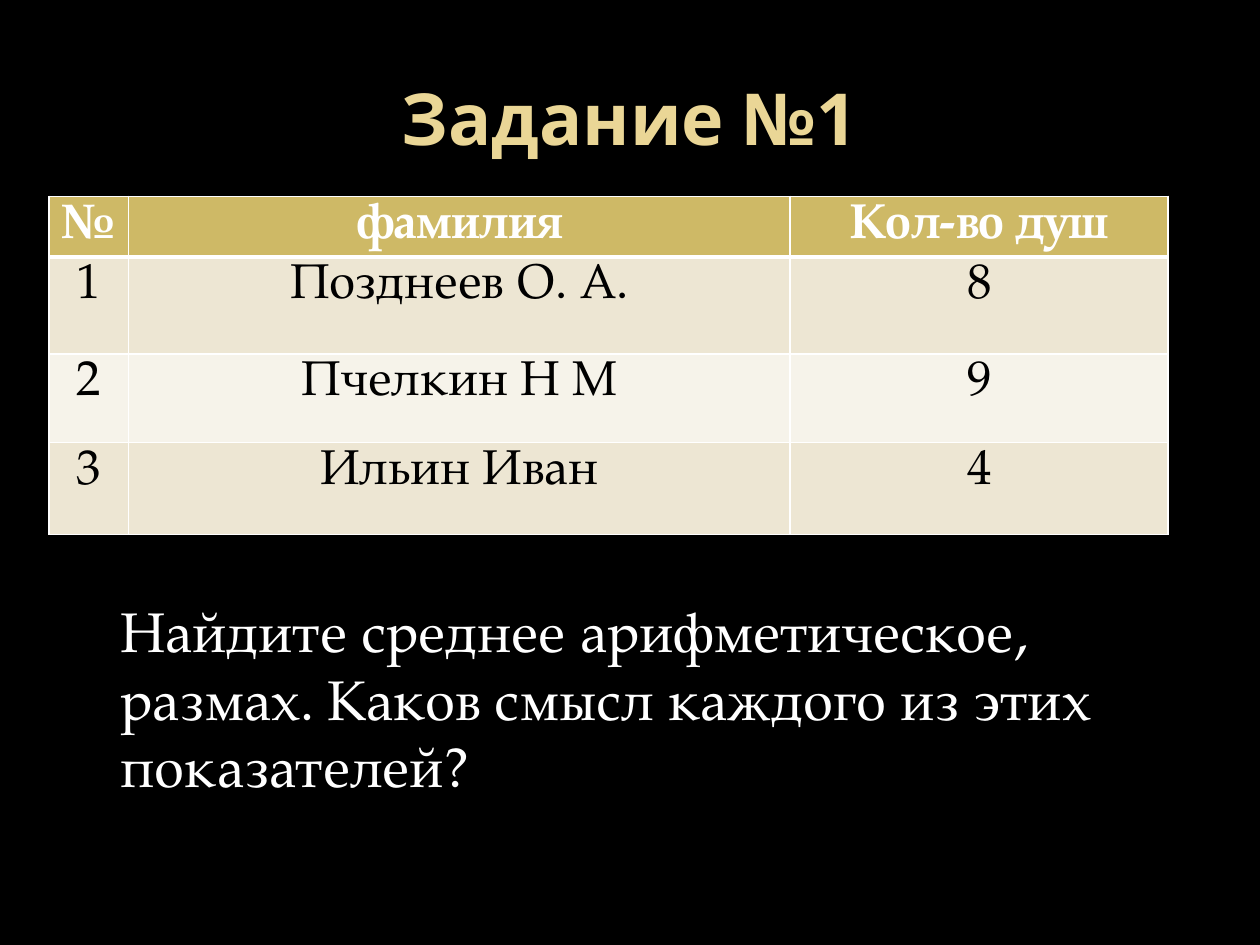
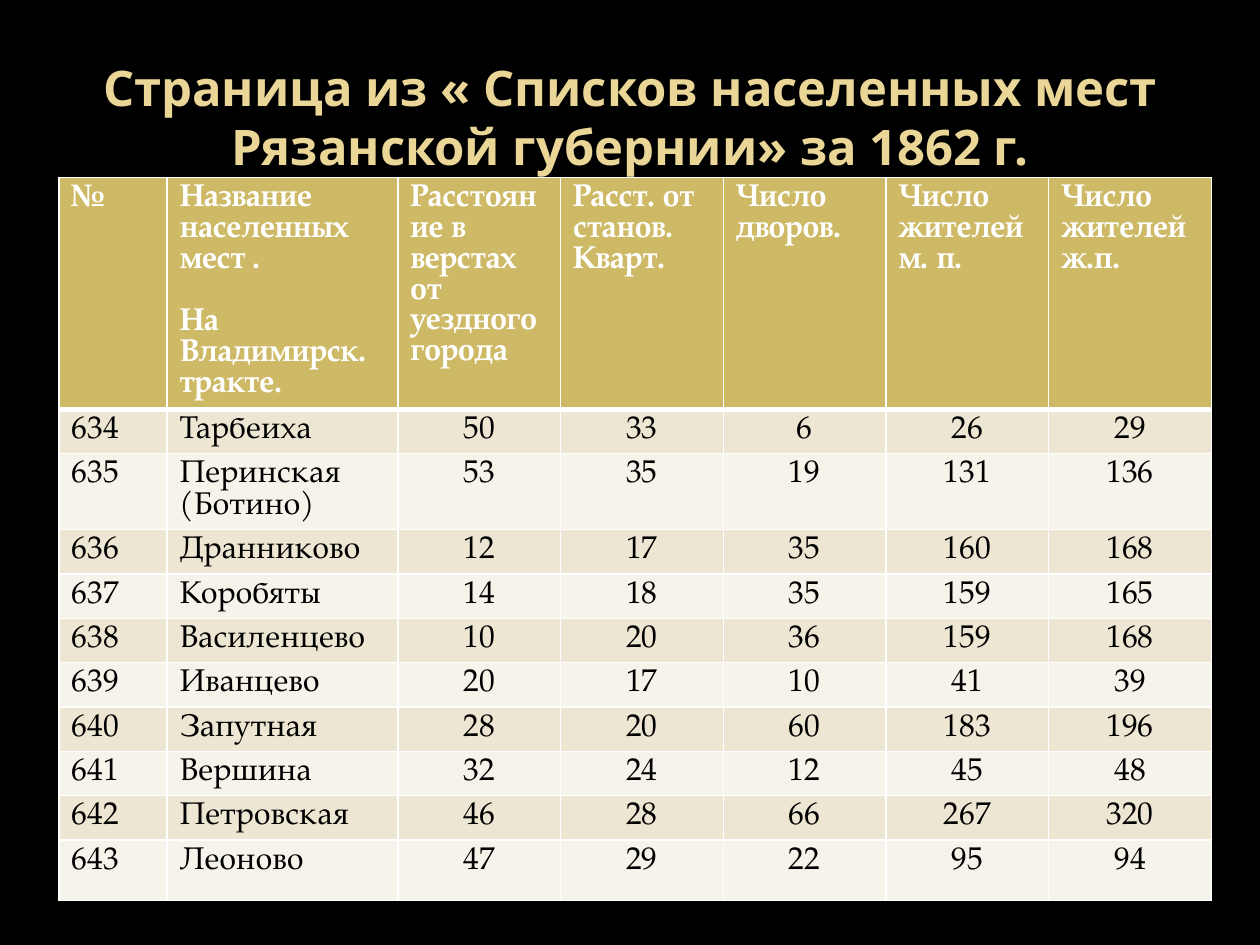
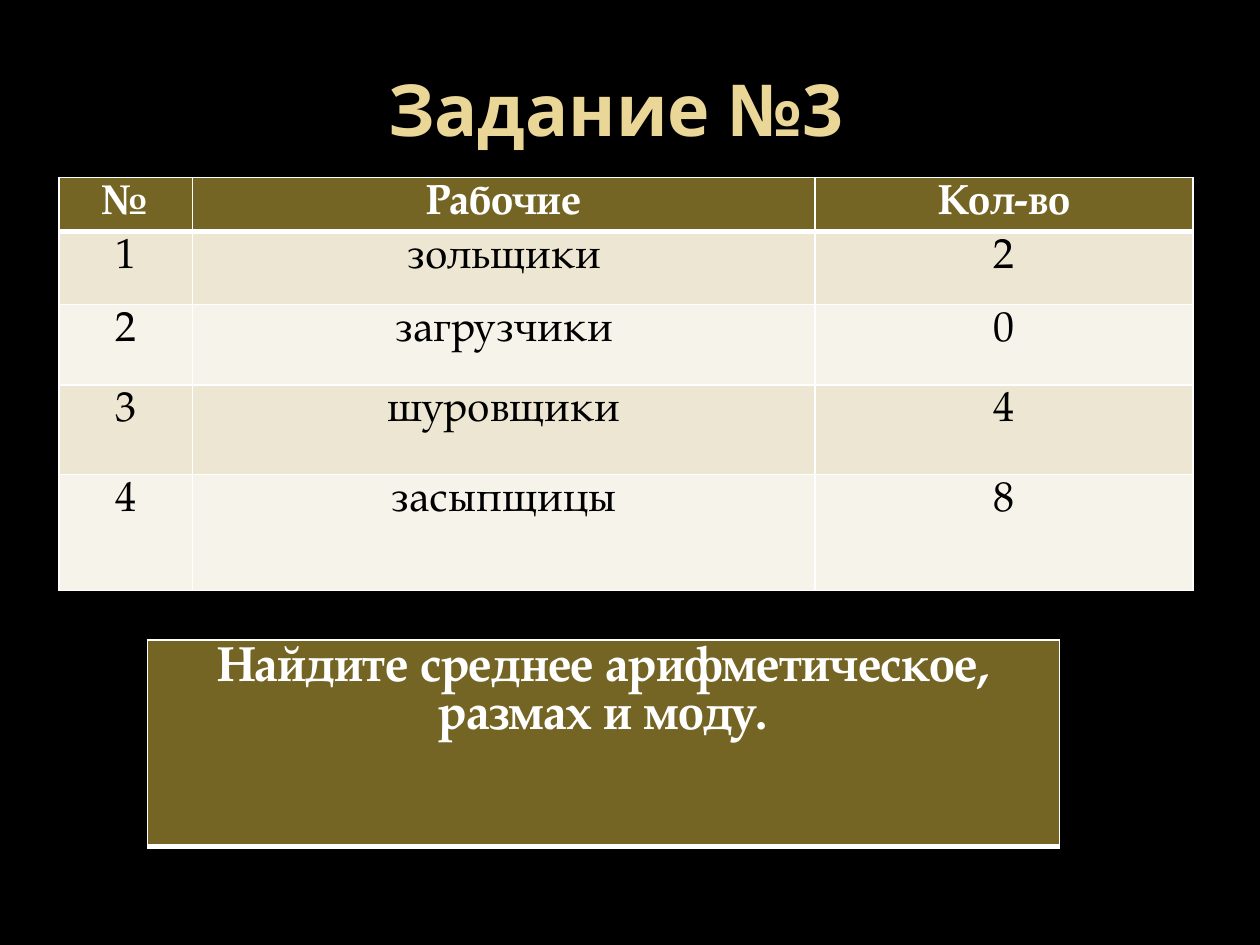
from pptx import Presentation
from pptx.dml.color import RGBColor as Rgb
from pptx.enum.text import MSO_ANCHOR as Anchor, PP_ALIGN as Align
from pptx.oxml import parse_xml
from pptx.oxml.ns import nsdecls
from pptx.util import Cm, Pt

HUES = {
    "back": "000000", "title": "EAD696", "white": "FFFFFF", "ink": "000000",
    "gold": "CEB966", "olive": "756525", "dark": "EDE6D3", "light": "F6F3EA",
}
HEAD = "Open Sans"
BODY = "TeX Gyre Pagella"


def style(para, face, size, hue, bold, align):
    para.alignment = align
    font = para.font
    font.name, font.size, font.bold = face, Pt(size), bold
    font.color.rgb = Rgb.from_string(HUES[hue])


def draw_table(slide, rows, left, top, widths, heights, size, band, aligns):
    frame = slide.shapes.add_table(
        len(rows), len(widths), Cm(left), Cm(top), Cm(sum(widths)), Cm(sum(heights)))
    table = frame.table
    for col, width in zip(table.columns, widths):
        col.width = Cm(width)
    for r, (row, height) in enumerate(zip(rows, heights)):
        table.rows[r].height = Cm(height)
        first = r == 0
        fill = band if first else ("dark" if r % 2 else "light")
        for c, text in enumerate(row):
            cell = table.cell(r, c)
            cell.text = text
            align = aligns[0] if first else aligns[1 + (c > 1)]
            for para in cell.text_frame.paragraphs:
                style(para, BODY, size, "white" if first else "ink", first, align)
            props = cell._tc.get_or_add_tcPr()
            for side in "LRTB":
                thick = (first and side == "B") or (r == 1 and side == "T")
                props.append(parse_xml(
                    f'<a:ln{side} {nsdecls("a")} w="{Pt(3 if thick else 1)}"><a:solidFill>'
                    f'<a:srgbClr val="{HUES["white"]}"/></a:solidFill></a:ln{side}>'))
            cell.fill.solid()
            cell.fill.fore_color.rgb = Rgb.from_string(HUES[fill])
    return table


prs = Presentation()
prs.slide_width, prs.slide_height = Cm(25.4), Cm(19.05)
back = prs.slide_master.background.fill
back.solid()
back.fore_color.rgb = Rgb.from_string(HUES["back"])

TITLES = [
    ("Задание №1", 41, 1.27, 0.76),
    ("Страница из « Списков населенных мест Рязанской губернии» за 1862 г.", 28, 1.27, 0.76),
    ("Задание №3", 41, 0.99, 0.58),
]
slides = []
for text, size, left, top in TITLES:
    slide = prs.slides.add_slide(prs.slide_layouts[5])
    title = slide.shapes.title
    title.left, title.top, title.width, title.height = Cm(left), Cm(top), Cm(22.86), Cm(3.18)
    title.text_frame.text = text
    title.text_frame.vertical_anchor = Anchor.MIDDLE
    style(title.text_frame.paragraphs[0], HEAD, size, "title", True, Align.CENTER)
    slides.append(slide)
souls, places, crew = slides

MID = [Align.CENTER] * 3
SOULS = [
    ("№", "фамилия", "Кол-во душ"),
    ("1", "Позднеев О. А.", "8"),
    ("2", "Пчелкин Н М", "9"),
    ("3", "Ильин Иван", "4"),
]
draw_table(souls, SOULS, 0.99, 3.96, [1.6, 13.34, 7.62], [1.04, 1.96, 1.78, 1.85], 28, "gold", MID)
box = souls.shapes.add_textbox(Cm(2.18), Cm(11.91), Cm(20.32), Cm(4.37))
box.text_frame.word_wrap = True
box.text_frame.text = (
    "Найдите среднее арифметическое, размах. Каков смысл каждого из этих показателей?")
style(box.text_frame.paragraphs[0], BODY, 32, "white", False, Align.LEFT)

PLACES = [
    ("№", "Название населенных\nмест .\nНа Владимирск. тракте.",
     "Расстояние в верстах от уездного города", "Расст. от станов. Кварт.",
     "Число дворов.", "Число жителей\vм. п.", "Число жителей ж.п."),
    ("634", "Тарбеиха", "50", "33", "6", "26", "29"),
    ("635", "Перинская (Ботино)", "53", "35", "19", "131", "136"),
    ("636", "Дранниково", "12", "17", "35", "160", "168"),
    ("637", "Коробяты", "14", "18", "35", "159", "165"),
    ("638", "Василенцево", "10", "20", "36", "159", "168"),
    ("639", "Иванцево", "20", "17", "10", "41", "39"),
    ("640", "Запутная", "28", "20", "60", "183", "196"),
    ("641", "Вершина", "32", "24", "12", "45", "48"),
    ("642", "Петровская", "46", "28", "66", "267", "320"),
    ("643", "Леоново", "47", "29", "22", "95", "94"),
]
grid = draw_table(
    places, PLACES, 1.19, 3.58, [2.18, 4.65] + [3.28] * 5,
    [4.67, 0.86, 1.47] + [0.86] * 7 + [1.22], 18, "gold",
    [Align.LEFT, Align.LEFT, Align.CENTER])
grid.cell(0, 1).text_frame.paragraphs[2].space_before = Pt(18)

CREW = [
    ("№", "Рабочие", "Кол-во"),
    ("1", "зольщики", "2"),
    ("2", "загрузчики", "0"),
    ("3", "шуровщики", "4"),
    ("4", "засыпщицы", "8"),
]
draw_table(crew, CREW, 1.19, 3.58, [2.69, 12.55, 7.62],
           [1.04, 1.47, 1.63, 1.8, 2.34], 24, "olive", MID)
TASK = [("Найдите среднее арифметическое, размах и моду.",)]
draw_table(crew, TASK, 2.97, 12.9, [18.39], [4.17], 28, "olive", MID)

prs.save("out.pptx")
